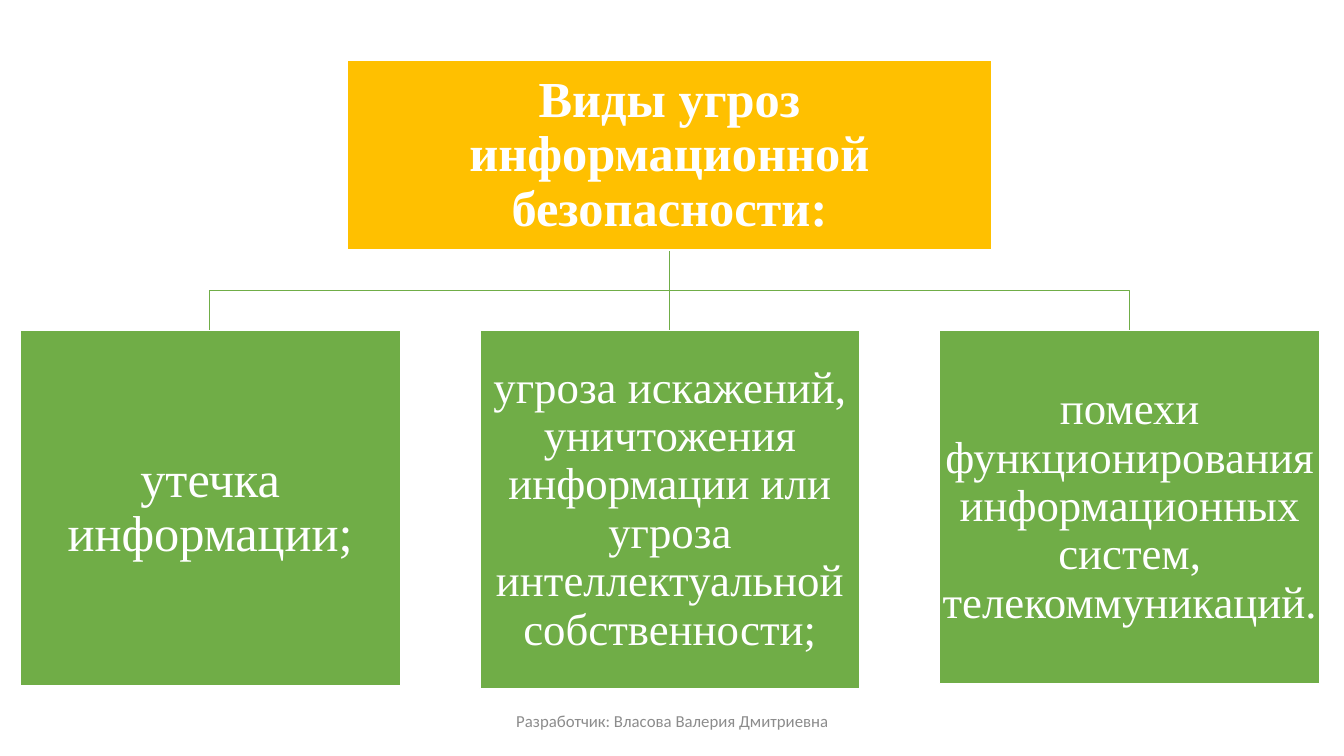
from lxml import etree
from pptx import Presentation, util as u
from pptx.dml.color import RGBColor
from pptx.enum import shapes, text
from pptx.oxml.ns import qn

PX = 9144  # 100 px to the inch
WHITE = RGBColor(0xFF, 0xFF, 0xFF)
AMBER = RGBColor(0xFF, 0xC0, 0x00)
GREEN = RGBColor(0x70, 0xAD, 0x47)
GREY = RGBColor(0x8C, 0x8C, 0x8C)

TITLE_BOX = (344, 60, 640, 188)
THREAT_LEFT, THREAT_TOP, THREAT_WIDTH, THREAT_STEP = 20, 328, 377, 456
FOOTER_BOX = (442, 695, 450, 40)

# wording, box height, font size, inset
THREATS = [
    ("утечка информации;", 352, 36, 3),
    ("угроза искажений, уничтожения информации или угроза "
     "интеллектуальной собственности;", 355, 32, 2),
    ("помехи функционирования информационных систем, "
     "телекоммуникаций.", 350, 32, 2),
]


def px(*lengths):
    return [u.Emu(n * PX) for n in lengths]


def write(sp, words, size, font, color, bold=False, spacing=None):
    """Put one centred paragraph in the middle of a shape."""
    tf = sp.text_frame
    tf.word_wrap = True
    tf.vertical_anchor = text.MSO_ANCHOR.MIDDLE
    p = tf.paragraphs[0]
    p.alignment = text.PP_ALIGN.CENTER
    if spacing:
        p.line_spacing = spacing
    r = p.add_run()
    r.text = words
    r.font.size = u.Pt(size)
    r.font.name = font
    r.font.bold = bold
    r.font.color.rgb = color


def node(s, box, words, fill, size, inset, bold=False):
    sp = s.shapes.add_shape(shapes.MSO_SHAPE.RECTANGLE, *px(*box))
    sp.shadow.inherit = False
    sp.fill.solid()
    sp.fill.fore_color.rgb = fill
    sp.line.color.rgb = WHITE
    sp.line.width = u.Pt(1)
    tf = sp.text_frame
    tf.margin_left = tf.margin_top = tf.margin_right = tf.margin_bottom = px(inset)[0]
    write(sp, words, size, "Times New Roman", WHITE, bold, 0.9)


def branch(s, x1, y1, x2, y2):
    """Join parent and child: straight if aligned, otherwise with two bends."""
    if x1 == x2:
        sp = s.shapes.add_connector(shapes.MSO_CONNECTOR.STRAIGHT, *px(x1, y1, x2, y2))
        etree.SubElement(sp._element.spPr, qn("a:effectLst"))
    else:
        middle = (y1 + y2) // 2
        outline = s.shapes.build_freeform(x1, y1, scale=PX)
        outline.add_line_segments([(x1, middle), (x2, middle), (x2, y2)], close=False)
        sp = outline.convert_to_shape()
        sp.shadow.inherit = False
        sp.fill.background()
    sp.line.color.rgb = GREEN
    sp.line.width = u.Pt(1)


def threat_tree(s, title_box):
    left, top, width, height = title_box
    lefts = [THREAT_LEFT + i * THREAT_STEP for i in range(len(THREATS))]
    for x in reversed(lefts):
        branch(s, left + width // 2, top + height, x + THREAT_WIDTH // 2, THREAT_TOP)
    node(s, title_box, "Виды угроз информационной безопасности:", AMBER, 36, 3, True)
    for x, (words, h, size, inset) in zip(lefts, THREATS):
        node(s, (x, THREAT_TOP, THREAT_WIDTH, h), words, GREEN, size, inset)


def footer(s, box):
    sp = s.shapes.add_textbox(*px(*box))
    write(sp, "Разработчик: Власова Валерия Дмитриевна", 12, "Calibri", GREY)


def main():
    prs = Presentation()
    prs.slide_width, prs.slide_height = px(1333, 750)
    s = prs.slides.add_slide(prs.slide_layouts[6])
    threat_tree(s, TITLE_BOX)
    footer(s, FOOTER_BOX)
    prs.save("out.pptx")


if __name__ == "__main__":
    main()
